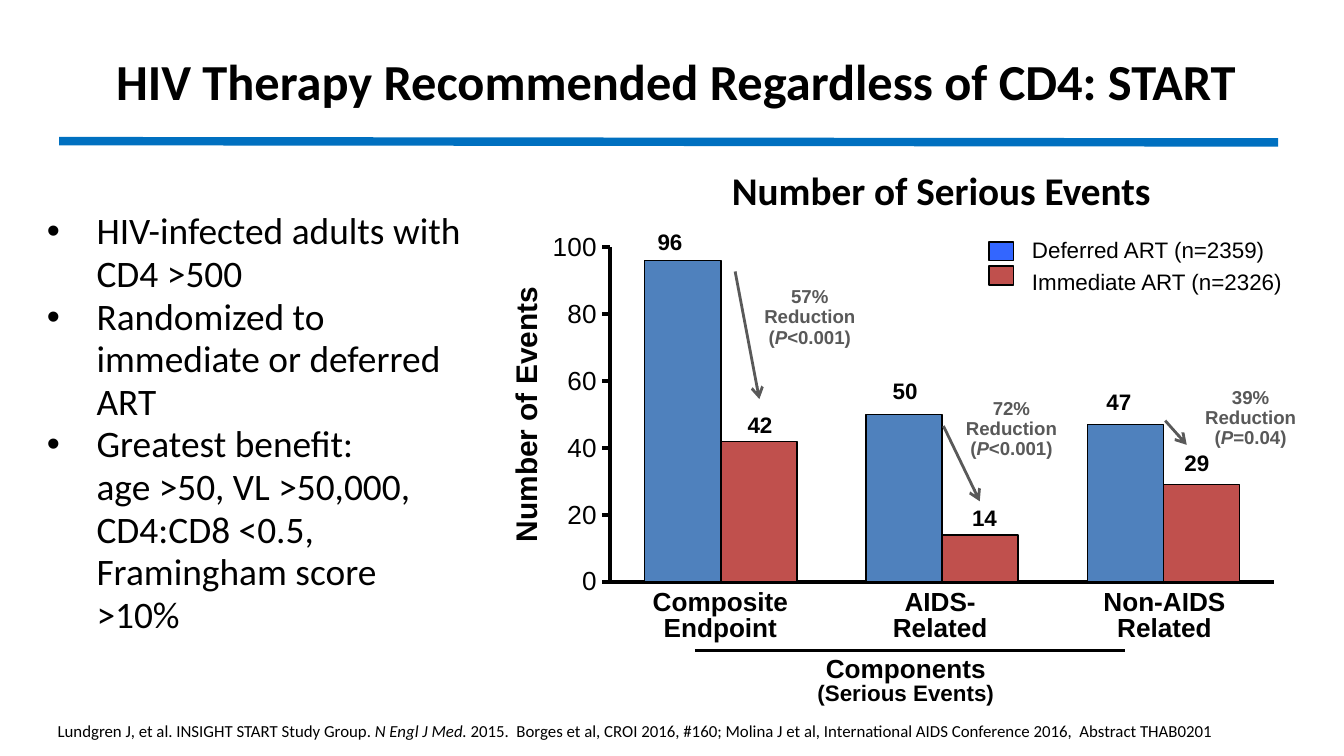
from dataclasses import dataclass

import pptx
import pptx.chart.data
import pptx.dml.color
import pptx.enum.chart
import pptx.enum.shapes
import pptx.enum.text
import pptx.oxml
import pptx.oxml.ns
import pptx.util
from pptx.util import Inches

BLACK, GRAY, BLUE, RED = "000000", "595959", "4F81BD", "C0504D"
ALIGN = pptx.enum.text.PP_ALIGN


@dataclass
class Label:
    text: str
    left: float
    top: float
    width: float
    height: float


@dataclass
class Reduction:
    percent: int
    p_value: str
    left: float
    top: float
    start: tuple[float, float]
    end: tuple[float, float]


def color(code: str) -> pptx.dml.color.RGBColor:
    return pptx.dml.color.RGBColor.from_string(code)


def add_element(parent, tag: str, **attributes: str):
    element = pptx.oxml.parse_xml(f"<{tag} {pptx.oxml.ns.nsdecls(tag.split(':')[0])}/>")
    for name, value in attributes.items():
        element.set(name, value)
    parent.append(element)
    return element


def add_text(page, label: Label, *, size: float, font="Arial", code=BLACK, bold=False,
             align=ALIGN.CENTER, spacing=1.0, after=0, wrap=True, bullet=False,
             rotation=0):
    """Each line of the text is a paragraph; parts between asterisks are italic."""
    box = page.shapes.add_textbox(Inches(label.left), Inches(label.top),
                                  Inches(label.width), Inches(label.height))
    box.rotation = rotation
    box.text_frame.word_wrap = wrap
    for index, line in enumerate(label.text.split("\n")):
        para = box.text_frame.paragraphs[0] if index == 0 else box.text_frame.add_paragraph()
        para.alignment, para.line_spacing = align, spacing
        para.space_after = pptx.util.Pt(after)
        if bullet:
            properties = para._p.get_or_add_pPr()
            properties.set("marL", str(Inches(0.87)))
            properties.set("indent", str(-Inches(0.37)))
            add_element(properties, "a:buFont", typeface="Arial")
            add_element(properties, "a:buChar", char="•")
        for part, words in enumerate(line.split("*")):
            for piece, phrase in enumerate(words.split("\v")):
                if piece:
                    para.add_line_break()
                span = para.add_run()
                span.text = phrase
                span.font.name, span.font.size = font, pptx.util.Pt(size)
                span.font.bold, span.font.italic = bold, part % 2 == 1
                span.font.color.rgb = color(code)
    return box


def add_line(page, start: tuple[float, float], end: tuple[float, float], *,
             code: str, width: float, arrow=False):
    line = page.shapes.add_connector(pptx.enum.shapes.MSO_CONNECTOR.STRAIGHT,
                                     *map(Inches, start + end))
    line.line.color.rgb, line.line.width = color(code), pptx.util.Pt(width)
    if arrow:
        add_element(line.line._get_or_add_ln(), "a:tailEnd", type="arrow")
    add_element(line._element.spPr, "a:effectLst")
    return line


def add_swatch(page, top: float, code: str):
    swatch = page.shapes.add_shape(pptx.enum.shapes.MSO_SHAPE.RECTANGLE,
                                   Inches(7.36), Inches(top), Inches(0.18), Inches(0.14))
    swatch.shadow.inherit = False
    swatch.fill.solid()
    swatch.fill.fore_color.rgb = color(code)
    swatch.line.color.rgb, swatch.line.width = color(BLACK), pptx.util.Pt(0.75)


def add_events_chart(page):
    data = pptx.chart.data.CategoryChartData()
    data.categories = ["1", "2", "3"]
    data.add_series("Series 1", (96, 50, 47))
    data.add_series("Series 2", (42, 14, 29))
    kinds = pptx.enum.chart
    width, height = 5.59, 2.83
    chart = page.shapes.add_chart(kinds.XL_CHART_TYPE.COLUMN_CLUSTERED, Inches(4),
                                  Inches(1.67), Inches(width), Inches(height), data).chart
    chart.has_legend = chart.has_title = False
    chart.font.name, chart.font.size = "Arial", pptx.util.Pt(14)
    chart.font.color.rgb = color(BLACK)

    plot = chart.plots[0]
    plot.gap_width, plot.overlap, plot.vary_by_categories = 91, 0, False
    for series, code in zip(plot.series, (BLUE, RED)):
        series.format.fill.solid()
        series.format.fill.fore_color.rgb = color(code)
        series.format.line.color.rgb = color(BLACK)
        series.format.line.width = pptx.util.Pt(0.75)

    for axis in (chart.category_axis, chart.value_axis):
        axis.has_major_gridlines = False
        axis.minor_tick_mark = kinds.XL_TICK_MARK.NONE
        axis.format.line.color.rgb = color(BLACK)
        axis.format.line.width = pptx.util.Pt(2.25)
    chart.category_axis.major_tick_mark = kinds.XL_TICK_MARK.NONE
    chart.category_axis.tick_label_position = kinds.XL_TICK_LABEL_POSITION.NONE
    values = chart.value_axis
    values.major_tick_mark = kinds.XL_TICK_MARK.OUTSIDE
    values.minimum_scale, values.maximum_scale, values.major_unit = 0, 100, 20
    values.tick_labels.font.bold = False

    # Fixed inner plot area, as shares of the chart frame
    area = chart._chartSpace.chart.plotArea
    for old in area.findall(pptx.oxml.ns.qn("c:layout")):
        area.remove(old)
    layout = add_element(area, "c:layout")
    area.insert(0, layout)
    manual = add_element(layout, "c:manualLayout")
    for tag, value in (("layoutTarget", "inner"), ("xMode", "edge"), ("yMode", "edge"),
                       ("x", 0.54 / width), ("y", 0.17 / height),
                       ("w", 4.94 / width), ("h", 2.49 / height)):
        add_element(manual, f"c:{tag}", val=str(value))


CATEGORIES = [
    Label("Composite\nEndpoint", 4.67, 4.34, 1.38, 0.5),
    Label("AIDS-Related", 6.42, 4.34, 1.15, 0.5),
    Label("Non-AIDS Related", 7.83, 4.34, 1.67, 0.5),
]
COUNTS = [(96, 4.58, 1.65), (42, 5.25, 3.01), (50, 6.33, 2.76),
          (14, 6.92, 3.7), (47, 7.92, 2.84), (29, 8.5, 3.29)]
REDUCTIONS = [
    Reduction(57, "<0.001", 5.58, 2.09, (5.47, 2.02), (5.65, 2.97)),
    Reduction(72, "<0.001", 7.08, 2.92, (7.02, 3.17), (7.29, 3.73)),
    Reduction(39, "=0.04", 8.86, 2.84, (8.67, 3.13), (8.83, 3.31)),
]
FINDINGS = "\n".join([
    "HIV-infected adults with CD4 >500",
    "Randomized to immediate or deferred ART",
    "Greatest benefit:\vage >50, VL >50,000, CD4:CD8 <0.5, Framingham score >10%",
])
CITATION = ("Lundgren J, et al. INSIGHT START Study Group. *N Engl J Med. *2015.  Borges et al, "
            "CROI 2016, #160; Molina J et al, International AIDS Conference 2016,  "
            "Abstract THAB0201")


def main():
    deck = pptx.Presentation()
    deck.slide_width, deck.slide_height = Inches(10), Inches(10 * 9 / 16)
    page = deck.slides.add_slide(deck.slide_layouts[6])

    # Heading and rule
    add_text(page, Label("HIV Therapy Recommended Regardless of CD4: START", 0.31, 0.32, 9.44, 0.55),
             size=27, font="Calibri", bold=True)
    add_line(page, (0.44, 1.05), (9.51, 1.06), code="0070C0", width=4.5)

    # Findings and citation
    add_text(page, Label(FINDINGS, -0.25, 1.52, 3.82, 3.3), size=20, font="Calibri",
             align=ALIGN.LEFT, spacing=0.95, bullet=True)
    add_text(page, Label(CITATION, 0.33, 5.31, 9.25, 0.25), size=9, font="Calibri",
             align=ALIGN.LEFT)

    # Chart with its title and axis labels
    add_events_chart(page)
    add_text(page, Label("Number of Serious Events", 4.42, 1.23, 5.17, 0.42), size=21,
             font="Calibri", bold=True, spacing=0.9)
    add_text(page, Label("Number of Events", 2.85, 2.9, 2.12, 0.37), size=16, bold=True,
             wrap=False, rotation=270)
    for category in CATEGORIES:
        add_text(page, category, size=14, bold=True, spacing=0.85)
    add_line(page, (5.17, 4.84), (8.37, 4.84), code=BLACK, width=2)
    components = add_text(page, Label("Components\n(Serious Events)", 5.14, 4.84, 3.2, 0.47),
                          size=14, bold=True, spacing=0.85)
    components.text_frame.paragraphs[1].runs[0].font.size = pptx.util.Pt(12)

    # Legend
    add_text(page, Label("Deferred ART (n=2359)\nImmediate ART (n=2326)", 7.58, 1.73, 2.48, 0.52),
             size=12, align=ALIGN.LEFT, spacing=0.9, after=4)
    add_swatch(page, 1.8, "3366FF")
    add_swatch(page, 1.98, RED)

    # Event counts and reductions
    for count, left, top in COUNTS:
        add_text(page, Label(str(count), left, top, 0.81, 0.3), size=12, bold=True)
    for drop in REDUCTIONS:
        add_line(page, drop.start, drop.end, code=GRAY, width=1.5, arrow=True)
        add_text(page, Label(f"{drop.percent}%\nReduction\n(*P*{drop.p_value})",
                             drop.left, drop.top, 0.89, 0.56),
                 size=10, code=GRAY, bold=True, spacing=0.9, wrap=False)

    deck.save("out.pptx")


if __name__ == "__main__":
    main()
